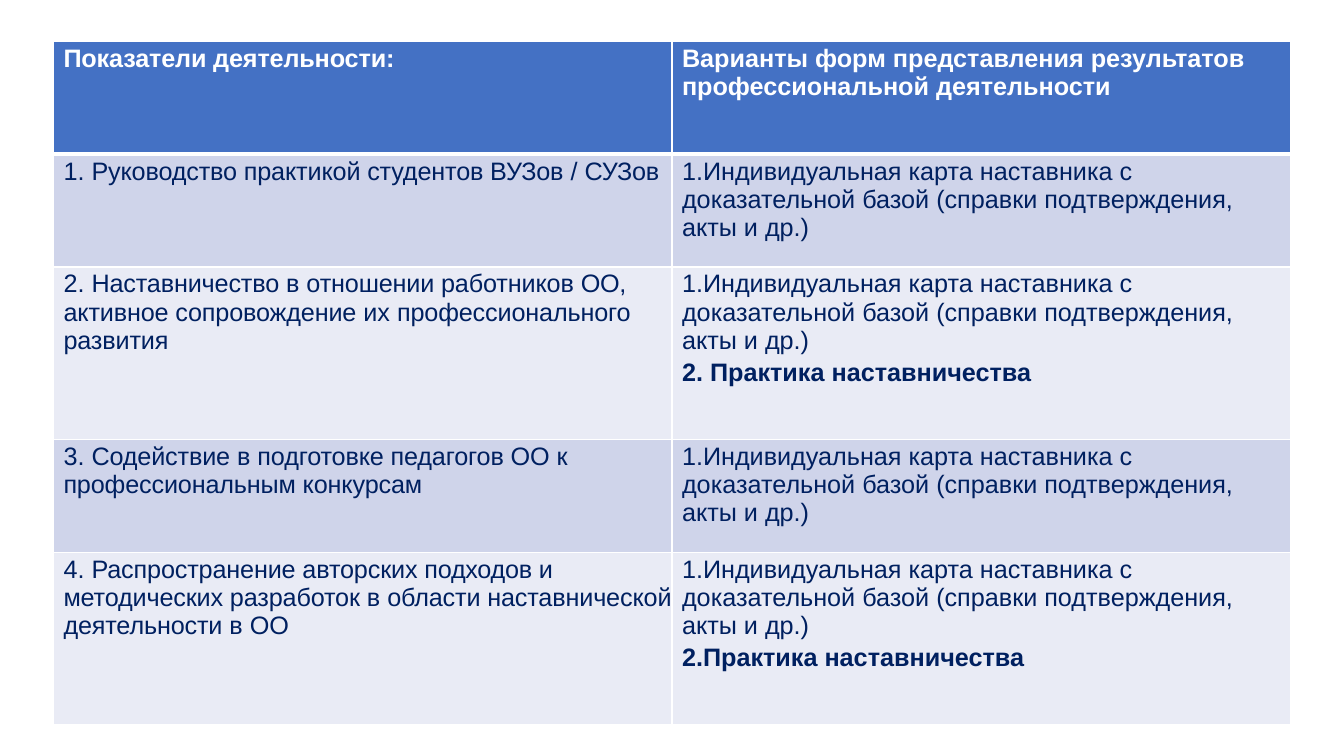
from dataclasses import dataclass
from lxml import etree
from pptx import Presentation
from pptx.dml.color import RGBColor
from pptx.oxml.ns import qn
from pptx.util import Inches, Pt

CARD = [("1.Индивидуальная карта наставника с доказательной базой (справки подтверждения, акты и др.)", 0)]

HEAD = (
    [[("Показатели деятельности:", -10)]],
    [[("Варианты форм представления результатов профессиональной деятельности", 0)]],
)

TASKS = [
    ([[("1. ", 0), ("Руководство практикой студентов ВУЗов ", -10), ("/ ", 0), ("СУЗов", -10)]],
     [CARD]),
    ([[("2. ", 0), ("Наставничество ", -10), ("в", 0), (" отношении работников ", -10),
       ("ОО, ", -20), ("активное сопровождение ", -10), ("их ", 0),
       ("профессионального развития", -10)]],
     [CARD, [("2. Практика наставничества", 0)]]),
    ([[("3. ", 0), ("Содействие ", -10), ("в ", 0), ("подготовке педагогов ОО ", -10),
       ("к ", 0), ("профессиональным конкурсам", -10)]],
     [CARD]),
    ([[("4. ", 0), ("Распространение авторских ", -10), ("подходов ", -20), ("и ", 0),
       ("методических разработок ", -10), ("в ", 0),
       ("области наставнической деятельности ", -10), ("в ", 0), ("ОО", -10)]],
     [CARD, [("2.Практика наставничества", 0)]]),
]


@dataclass(frozen=True)
class Theme:
    font: str = "Arial"
    size: int = 18
    gap: float = 2.5
    head: str = "4471C4"
    bands: tuple = ("CFD4EA", "E9EBF5")
    ink: str = "002060"
    white: str = "FFFFFF"
    thin: int = 1
    thick: int = 3


THEME = Theme()
WIDE, HIGH = 13.33, 7.5
LEFT, TOP, SPAN = 0.53, 0.41, 12.27
SHORT, TALL = 1.12, 1.71


def add_text(cell, paras, color, bold):
    frame = cell.text_frame
    for n, runs in enumerate(paras):
        para = frame.add_paragraph() if n else frame.paragraphs[0]
        if n:
            para.space_before = Pt(THEME.gap)
        for words, track in runs:
            run = para.add_run()
            run.text = words
            font = run.font
            font.name = THEME.font
            font.size = Pt(THEME.size)
            font.bold = bold or n > 0
            font.color.rgb = RGBColor.from_string(color)
            run._r.get_or_add_rPr().set("spc", str(track))


def add_edges(cell, widths):
    props = cell._tc.get_or_add_tcPr()
    for n, (side, width) in enumerate(widths.items()):
        line = etree.Element(qn("a:ln" + side), w=str(Pt(width)))
        fill = etree.SubElement(line, qn("a:solidFill"))
        etree.SubElement(fill, qn("a:srgbClr"), val=THEME.white)
        props.insert(n, line)


def build():
    deck = Presentation()
    deck.slide_width, deck.slide_height = Inches(WIDE), Inches(HIGH)
    slide = deck.slides.add_slide(deck.slide_layouts[6])

    rows = [HEAD] + TASKS
    highs = [TALL if len(forms) > 1 else SHORT for _, forms in rows]
    table = slide.shapes.add_table(
        len(rows), len(HEAD), Inches(LEFT), Inches(TOP), Inches(SPAN), Inches(sum(highs))
    ).table
    for col in table.columns:
        col.width = Inches(SPAN / len(HEAD))

    for r, row in enumerate(rows):
        table.rows[r].height = Inches(highs[r])
        top = r == 0
        fill = THEME.head if top else THEME.bands[(r - 1) % 2]
        edges = {
            "L": THEME.thin,
            "R": THEME.thin,
            "T": THEME.thick if r == 1 else THEME.thin,
            "B": THEME.thick if top else THEME.thin,
        }
        for c, paras in enumerate(row):
            cell = table.cell(r, c)
            cell.margin_left, cell.margin_top = Inches(0.1), Inches(0.03)
            cell.margin_right = cell.margin_bottom = 0
            cell.fill.solid()
            cell.fill.fore_color.rgb = RGBColor.from_string(fill)
            add_edges(cell, edges)
            add_text(cell, paras, THEME.white if top else THEME.ink, top)

    deck.save("out.pptx")


if __name__ == "__main__":
    build()
